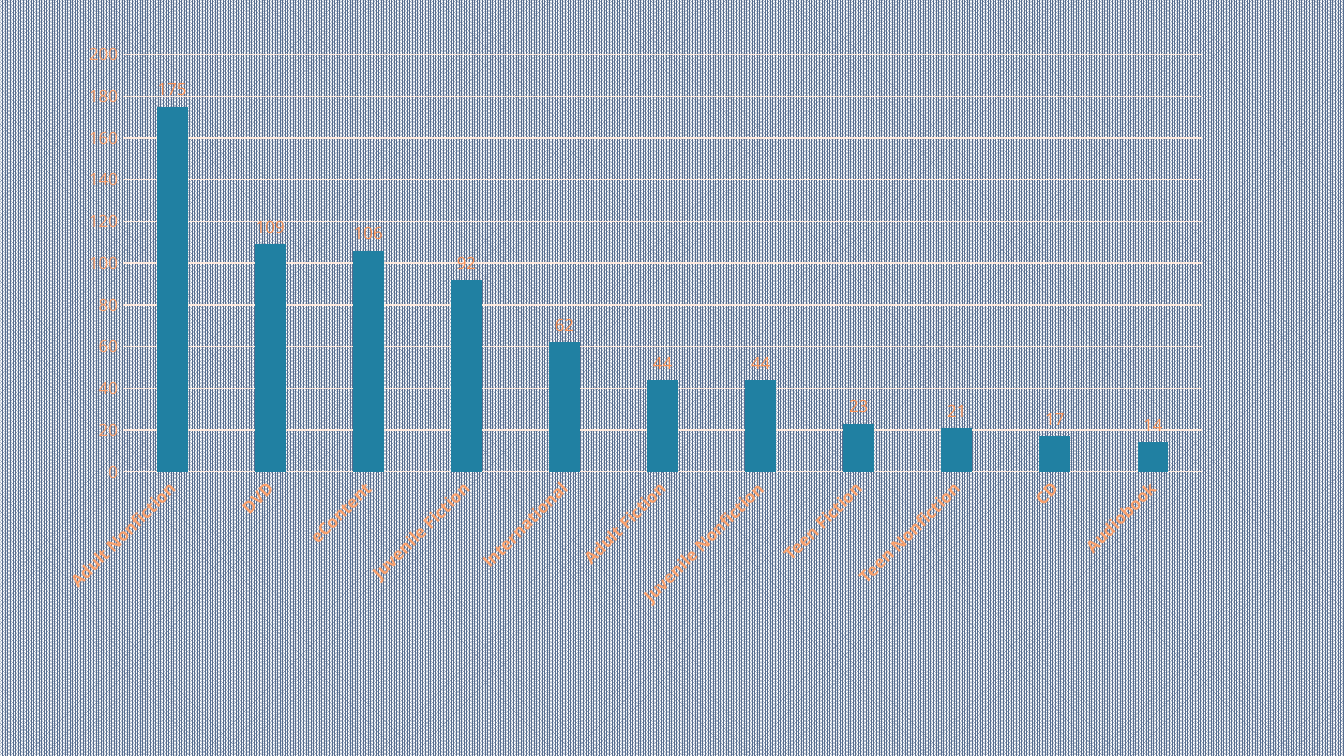
import pptx
import pptx.chart.data
import pptx.dml.color
import pptx.enum.chart
import pptx.enum.dml
import pptx.util
from pptx.util import Inches

FACE = "Open Sans"
HUES = {
    "slate": "566D8F",
    "white": "FFFFFF",
    "teal": "2080A2",
    "text": "F76E1E",
    "axis": "FAA16D",
    "label": "F99256",
    "grid": "FEE9DD",
}
LOANS = {
    "Adult Nonfiction": 175,
    "DVD": 109,
    "eContent": 106,
    "Juvenile Fiction": 92,
    "International": 62,
    "Adult Fiction": 44,
    "Juvenile Nonfiction": 44,
    "Teen Fiction": 23,
    "Teen Nonfiction": 21,
    "CD": 17,
    "Audiobook": 14,
}


def hue(name):
    """Return the named colour."""
    return pptx.dml.color.RGBColor.from_string(HUES[name])


def set_font(font, size, name, bold=False):
    """Set face, size, colour and weight of a font."""
    font.name = FACE
    font.size = pptx.util.Pt(size)
    font.bold = bold
    font.color.rgb = hue(name)


def set_line(line):
    """Give a line the thin grid style."""
    line.width = pptx.util.Pt(0.75)
    line.color.rgb = hue("grid")


def fill_back(slide):
    """Fill the slide background with a dense dot pattern."""
    fill = slide.background.fill
    fill.patterned()
    fill.pattern = pptx.enum.dml.MSO_PATTERN.PERCENT_90
    fill.fore_color.rgb = hue("slate")
    fill.back_color.rgb = hue("white")


def style_axes(chart):
    """Style both axes and the grid of a chart."""
    cats, vals = chart.category_axis, chart.value_axis
    for axis in (cats, vals):
        axis.major_tick_mark = pptx.enum.chart.XL_TICK_MARK.NONE
        axis.minor_tick_mark = pptx.enum.chart.XL_TICK_MARK.NONE
        set_font(axis.tick_labels.font, 9, "axis", axis is cats)
    cats.has_major_gridlines = False
    set_line(cats.format.line)
    cats._element.txPr.bodyPr.set("rot", "-2700000")
    vals.format.line.fill.background()
    vals.has_major_gridlines = True
    set_line(vals.major_gridlines.format.line)


def add_bars(slide, left, top, width, height):
    """Add the column chart of loans in the given box."""
    data = pptx.chart.data.CategoryChartData()
    data.categories = list(LOANS)
    data.add_series("Series 1", list(LOANS.values()))
    kind = pptx.enum.chart.XL_CHART_TYPE.COLUMN_CLUSTERED
    chart = slide.shapes.add_chart(kind, left, top, width, height, data).chart
    chart.has_title = False
    chart.has_legend = False
    set_font(chart.font, 10, "text")
    style_axes(chart)
    plot = chart.plots[0]
    plot.vary_by_categories = False
    plot.gap_width = 219
    plot.overlap = -27
    bars = plot.series[0]
    bars.format.fill.solid()
    bars.format.fill.fore_color.rgb = hue("teal")
    labels = bars.data_labels
    labels.show_value = True
    labels.position = pptx.enum.chart.XL_LABEL_POSITION.OUTSIDE_END
    set_font(labels.font, 9, "label")


def main():
    """Build and save the slide."""
    deck = pptx.Presentation()
    deck.slide_width = Inches(10)
    deck.slide_height = deck.slide_width * 9 // 16
    slide = deck.slides.add_slide(deck.slide_layouts[6])
    fill_back(slide)
    add_bars(slide, Inches(0.31), Inches(0.23), Inches(8.81), Inches(4.38))
    deck.save("out.pptx")


if __name__ == "__main__":
    main()
